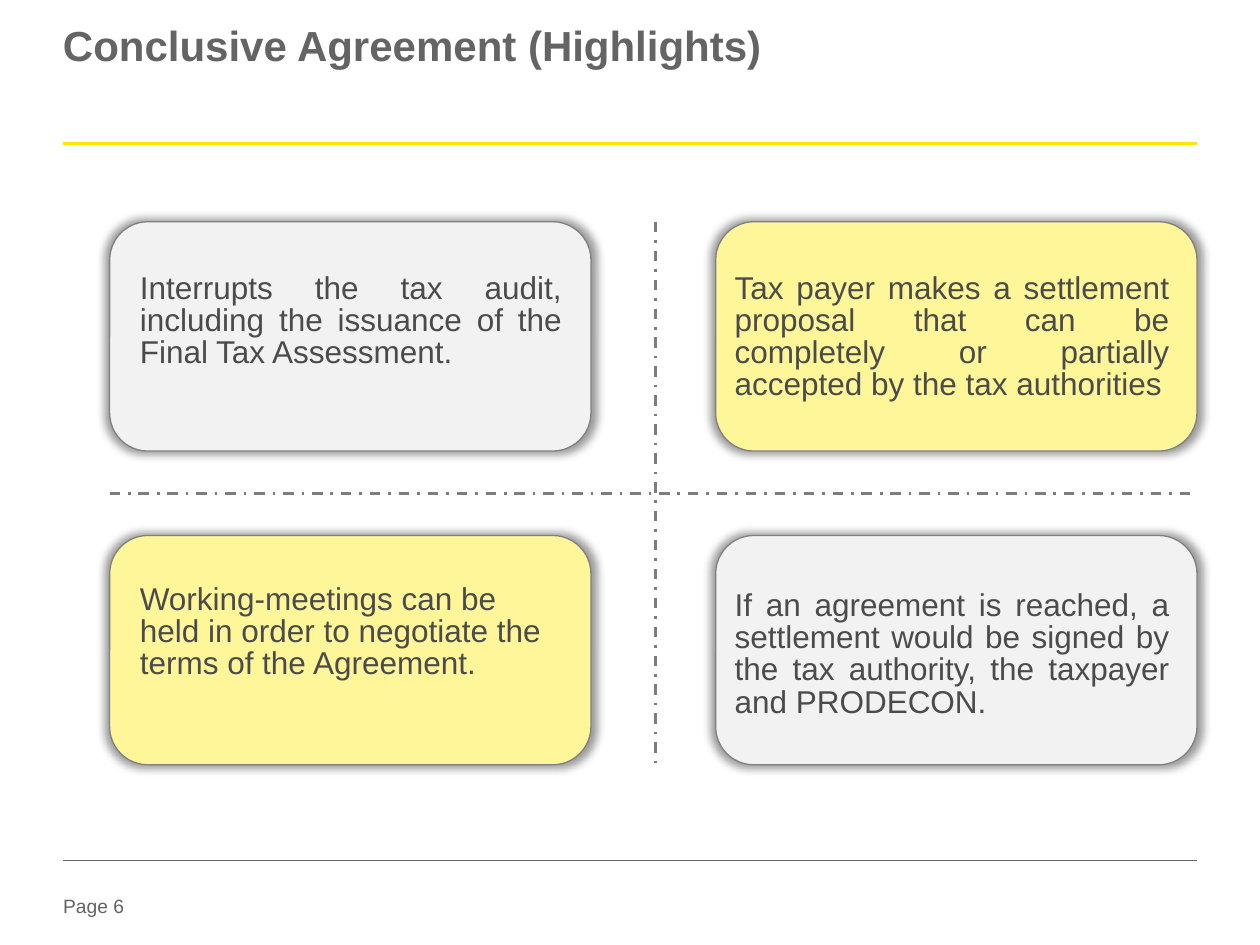
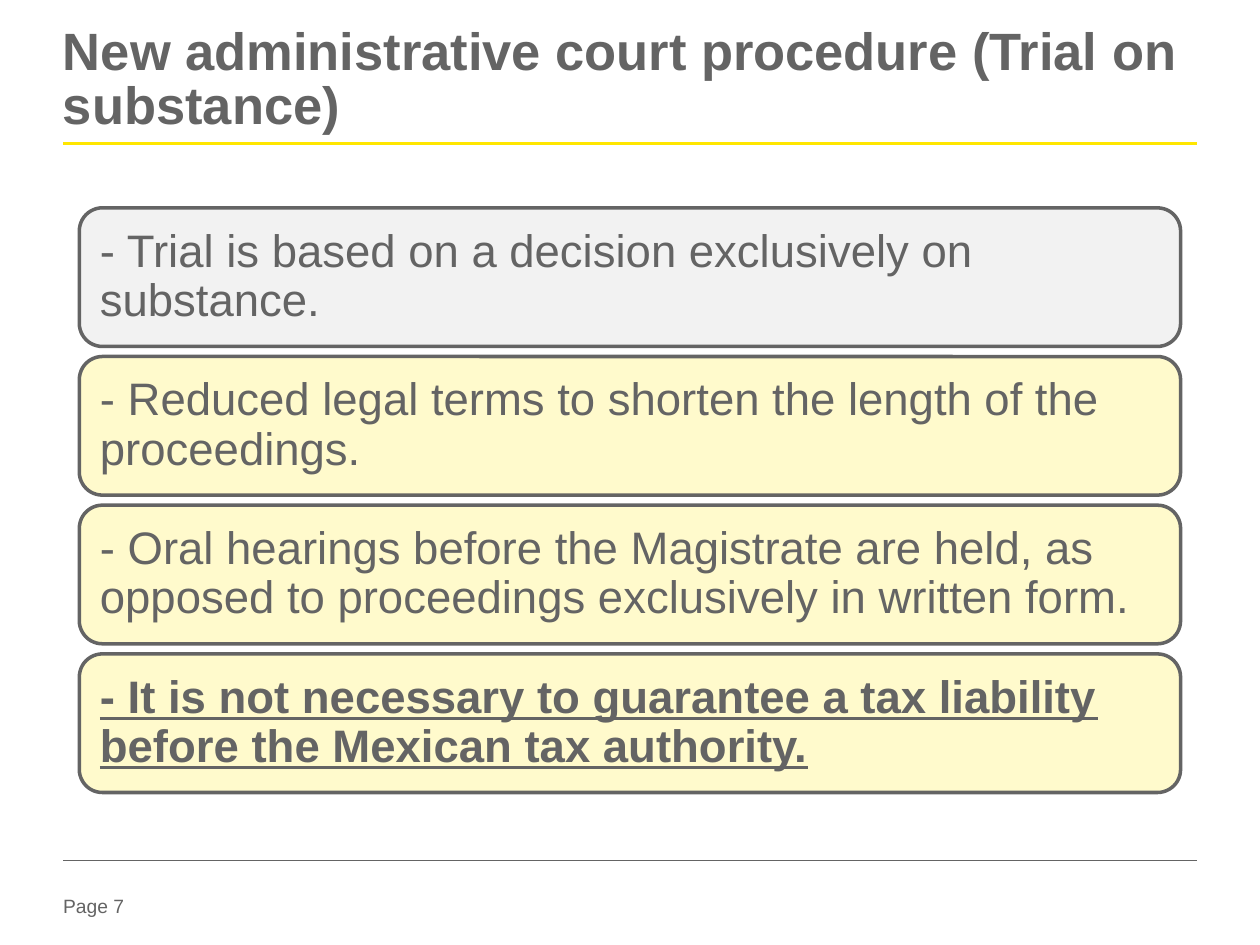
from lxml import etree
from pptx import Presentation
from pptx.dml.color import RGBColor
from pptx.enum.dml import MSO_LINE
from pptx.enum.shapes import MSO_CONNECTOR, MSO_SHAPE
from pptx.enum.text import MSO_ANCHOR, PP_ALIGN
from pptx.oxml.ns import qn
from pptx.util import Inches, Pt

STRAIGHT = MSO_CONNECTOR.STRAIGHT
ROUNDED = MSO_SHAPE.ROUNDED_RECTANGLE
DASH_DOT = MSO_LINE.DASH_DOT
LEFT, JUSTIFY = PP_ALIGN.LEFT, PP_ALIGN.JUSTIFY
TOP, MIDDLE = MSO_ANCHOR.TOP, MSO_ANCHOR.MIDDLE

FONT = "Arial"
COLORS = {
    "text": "646464",
    "card_text": "4B4B4B",
    "accent": "FFE600",
    "gray": "F2F2F2",
    "yellow": "FFF599",
    "pale_yellow": "FFFACC",
    "card_border": "808080",
    "divider": "7D7D7D",
    "shadow": "000000",
}


def color(name):
    """Return the named palette colour."""
    return RGBColor.from_string(COLORS[name])


def write_text(shape, text, size, color_name="text", bold=False, underline=False,
               align=LEFT, anchor=TOP, spacing=1.0, margins=(0, 0, 0, 0)):
    """Fill a shape with one formatted paragraph."""
    frame = shape.text_frame
    frame.word_wrap = True
    frame.vertical_anchor = anchor
    frame.margin_left, frame.margin_top, frame.margin_right, frame.margin_bottom = map(Inches, margins)
    paragraph = frame.paragraphs[0]
    paragraph.alignment = align
    paragraph.line_spacing = spacing
    run = paragraph.add_run()
    run.text = text
    font = run.font
    font.name, font.size = FONT, Pt(size)
    font.bold, font.underline = bold, underline
    font.color.rgb = color(color_name)


def add_text(slide, box, text, size, **text_format):
    """Add a text box at the given left, top, width and height."""
    write_text(slide.shapes.add_textbox(*map(Inches, box)), text, size, **text_format)


def add_line(slide, start, end, color_name, width, dash=None):
    """Add a straight line without a shadow."""
    line = slide.shapes.add_connector(STRAIGHT, *map(Inches, start + end))
    line.line.color.rgb = color(color_name)
    line.line.width = Pt(width)
    if dash:
        line.line.dash_style = dash
    etree.SubElement(line._element.spPr, qn("a:effectLst"))


def add_panel(slide, box, fill, border, border_width):
    """Add a rounded rectangle and return it."""
    panel = slide.shapes.add_shape(ROUNDED, *map(Inches, box))
    panel.shadow.inherit = False
    panel.fill.solid()
    panel.fill.fore_color.rgb = color(fill)
    panel.line.color.rgb = color(border)
    panel.line.width = Pt(border_width)
    return panel


def add_soft_shadow(shape):
    """Surround a shape with a soft, centred shadow."""
    effects = shape._element.spPr.find(qn("a:effectLst"))
    shadow = etree.SubElement(effects, qn("a:outerShdw"), blurRad="63500", sx="102000",
                              sy="102000", algn="ctr", rotWithShape="0")
    tint = etree.SubElement(shadow, qn("a:srgbClr"), val=COLORS["shadow"])
    etree.SubElement(tint, qn("a:alpha"), val="40000")


def add_base_slide(presentation, title, title_size, page):
    """Add a slide with its title, rules and page number."""
    slide = presentation.slides.add_slide(presentation.slide_layouts[6])
    add_text(slide, (0.5, 7.1, 0.79, 0.22), f"Page {page}", 11)
    add_line(slide, (0.5, 1.14), (9.5, 1.14), "accent", 1.5)
    add_line(slide, (0.5, 6.83), (9.5, 6.83), "text", 0.25)
    add_text(slide, (0.5, 0.22, 9, 0.94), title, title_size, bold=True, spacing=0.85)
    return slide


def add_highlight_grid(slide, box, highlights):
    """Place four highlight cards around crossing dashed dividers."""
    left, top, width, height = box
    card_width, card_height = 3.82, 1.82
    text_lefts, text_widths = (0.24, 0.15), (3.35, 3.45)
    for index, (text, fill, align, text_top) in enumerate(highlights):
        row, column = divmod(index, 2)
        card_left = left + column * (width - card_width)
        card_top = top + row * (height - card_height)
        card = add_panel(slide, (card_left, card_top, card_width, card_height),
                         fill, "card_border", 0.75)
        add_soft_shadow(card)
        text_box = (card_left + text_lefts[column], card_top + text_top, text_widths[column], 1.3)
        add_text(slide, text_box, text, 18, color_name="card_text", align=align,
                 spacing=0.85, margins=(0, 0.04, 0, 0))
    middle_x, middle_y = left + width / 2 + 0.02, top + height / 2
    add_line(slide, (left, middle_y), (left + width, middle_y), "divider", 1.5, DASH_DOT)
    add_line(slide, (middle_x, top), (middle_x, top + height), "divider", 1.5, DASH_DOT)


def add_statement_stack(slide, box, statements):
    """Stack full-width statements with equal gaps."""
    left, top, width, height = box
    gap = 0.08
    panel_height = (height + gap) / len(statements) - gap
    for index, (text, fill, emphasis) in enumerate(statements):
        panel_top = top + index * (panel_height + gap)
        panel = add_panel(slide, (left, panel_top, width, panel_height), fill, "text", 2)
        write_text(panel, text, 26, bold=emphasis, underline=emphasis, anchor=MIDDLE,
                   spacing=0.9, margins=(0.11,) * 4)


def main():
    """Build and save the presentation."""
    presentation = Presentation()
    presentation.slide_width, presentation.slide_height = Inches(10), Inches(7.5)

    agreement = add_base_slide(presentation, "Conclusive Agreement (Highlights)", 24, 6)
    add_highlight_grid(agreement, (0.87, 1.76, 8.63, 4.31), [
        ("Interrupts the tax audit, including the issuance of the Final Tax Assessment.",
         "gray", JUSTIFY, 0.37),
        ("Tax payer makes a settlement proposal that can be completely or partially "
         "accepted by the tax authorities", "yellow", JUSTIFY, 0.37),
        ("Working-meetings can be held in order to negotiate the terms of the Agreement.",
         "yellow", LEFT, 0.35),
        ("If an agreement is reached, a settlement would be signed by the tax authority, "
         "the taxpayer and PRODECON.", "gray", JUSTIFY, 0.4),
    ])

    procedure = add_base_slide(
        presentation, "New administrative court procedure (Trial on substance)", 30, 7)
    add_statement_stack(procedure, (0.63, 1.65, 8.74, 4.64), [
        ("- Trial is based on a decision exclusively on substance.", "gray", False),
        ("- Reduced legal terms to shorten the length of the proceedings.", "pale_yellow", False),
        ("- Oral hearings before the Magistrate are held, as opposed to proceedings "
         "exclusively in written form.", "pale_yellow", False),
        ("- It is not necessary to guarantee a tax liability before the Mexican tax authority.",
         "pale_yellow", True),
    ])
    presentation.save("out.pptx")


if __name__ == "__main__":
    main()
